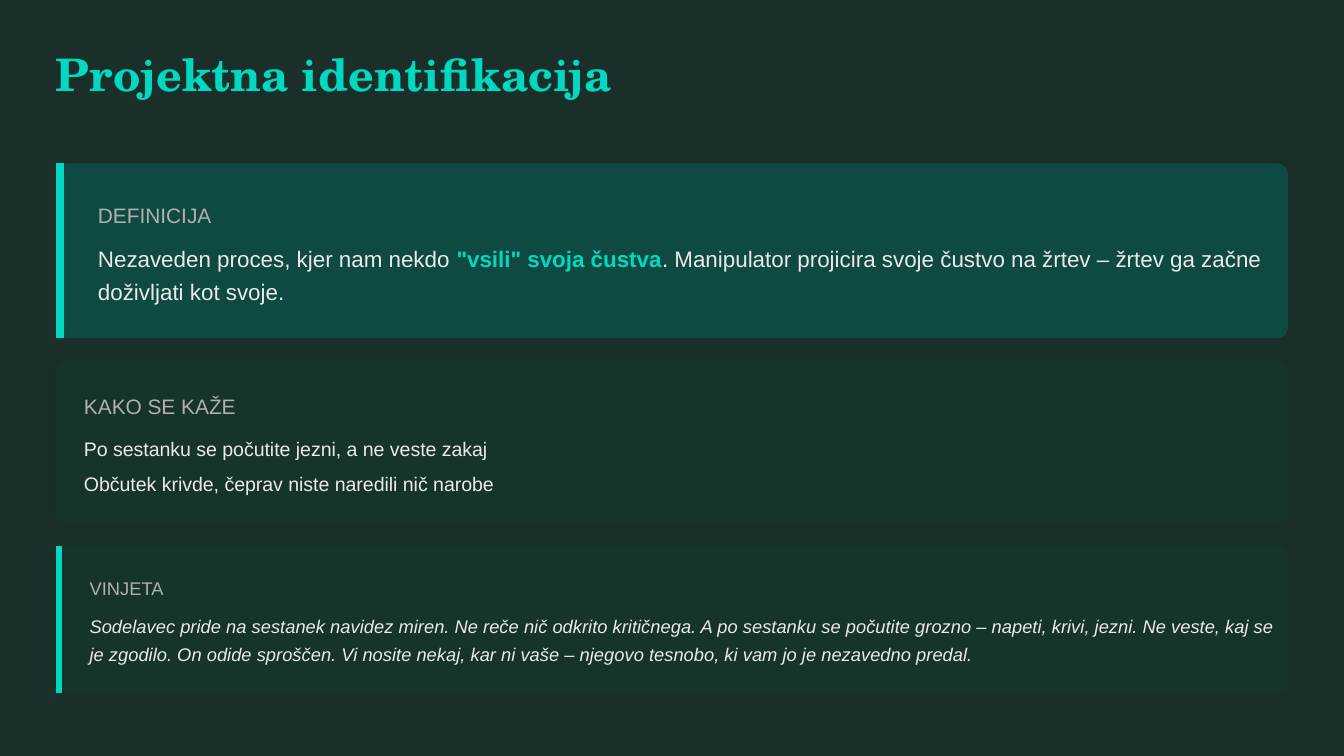
from lxml import etree
from pptx import Presentation
from pptx.dml.color import RGBColor
from pptx.enum.shapes import MSO_CONNECTOR, MSO_SHAPE
from pptx.oxml.ns import qn
from pptx.util import Pt

ROUNDED = MSO_SHAPE.ROUNDED_RECTANGLE
STRAIGHT = MSO_CONNECTOR.STRAIGHT

BACKGROUND = RGBColor(0x1A, 0x2E, 0x2A)
ACCENT = RGBColor(0x00, 0xD9, 0xC0)
CARD_STRONG = RGBColor(0x0F, 0x4A, 0x42)
CARD_SOFT = RGBColor(0x16, 0x33, 0x2E)
LABEL = RGBColor(0xB0, 0xB0, 0xB0)
BODY = RGBColor(0xEA, 0xEA, 0xEA)

LEFT, WIDTH, RADIUS = 30, 660, 6


class SlideBuilder:
    heading_font = "TeX Gyre Schola"
    body_font = "Arial"

    def __init__(self, prs):
        self.s = prs.slides.add_slide(prs.slide_layouts[6])
        fill = self.s.background.fill
        fill.solid()
        fill.fore_color.rgb = BACKGROUND

    def card(self, top, height, color, bar=0):
        """Rounded panel, with an accent bar of the given width on its left."""
        sp = self.s.shapes.add_shape(ROUNDED, Pt(LEFT), Pt(top), Pt(WIDTH), Pt(height))
        sp.adjustments[0] = RADIUS / height
        sp.shadow.inherit = False
        sp.fill.solid()
        sp.fill.fore_color.rgb = color
        sp.line.fill.background()
        if bar:
            self.line(LEFT + bar / 2, top, top + height, bar)

    def line(self, x, top, bottom, width):
        cn = self.s.shapes.add_connector(STRAIGHT, Pt(x), Pt(top), Pt(x), Pt(bottom))
        cn.line.color.rgb = ACCENT
        cn.line.width = Pt(width)
        etree.SubElement(cn._element.spPr, qn("a:effectLst"))

    def text(self, left, top, width, height, runs, size, leading,
             font=body_font, italic=False, after=0):
        """Text box; runs is a list of (text, color, bold)."""
        box = self.s.shapes.add_textbox(Pt(left), Pt(top), Pt(width), Pt(height))
        tf = box.text_frame
        tf.word_wrap = True
        tf.margin_left = tf.margin_right = tf.margin_top = tf.margin_bottom = 0
        p = tf.paragraphs[0]
        p.line_spacing = Pt(leading)
        p.space_after = Pt(after)
        for content, color, bold in runs:
            r = p.add_run()
            r.text = content
            r.font.name = font
            r.font.size = Pt(size)
            r.font.color.rgb = color
            r.font.bold = bold
            r.font.italic = italic


def main():
    prs = Presentation()
    prs.slide_width, prs.slide_height = Pt(720), Pt(405)
    b = SlideBuilder(prs)

    # Title
    b.text(LEFT, 30, 338, 24, [("Projektna identifikacija", ACCENT, True)],
           24, 24, font=b.heading_font, after=18)

    # Definition
    b.card(87.6, 93.75, CARD_STRONG, bar=4.5)
    b.text(52.5, 106, 632, 15.8, [("DEFINICIJA", LABEL, False)], 11.2, 15.8, after=6)
    b.text(52.5, 127.6, 632, 36, [
        ("Nezaveden proces, kjer nam nekdo ", BODY, False),
        ('"vsili" svoja čustva', ACCENT, True),
        (". Manipulator projicira svoje čustvo na žrtev – žrtev ga začne "
         "doživljati kot svoje.", BODY, False),
    ], 12, 18)

    # Signs
    b.card(193.5, 87, CARD_SOFT)
    b.text(45, 208.4, 643, 15.8, [("KAKO SE KAŽE", LABEL, False)], 11.2, 15.8, after=7.5)
    signs = ["Po sestanku se počutite jezni, a ne veste zakaj",
             "Občutek krivde, čeprav niste naredili nič narobe"]
    for i, sign in enumerate(signs):
        b.text(45, 231.7 + i * 19.2, 643, 14.7, [(sign, BODY, False)], 10.5, 14.7)

    # Vignette
    b.card(292.5, 79, CARD_SOFT, bar=3)
    b.text(48, 307.4, 639.4, 13.7, [("VINJETA", LABEL, False)], 9.8, 13.7, after=6)
    b.text(48, 327, 639.4, 29.2, [
        ("Sodelavec pride na sestanek navidez miren. Ne reče nič odkrito kritičnega. "
         "A po sestanku se počutite grozno – napeti, krivi, jezni. Ne veste, kaj se je "
         "zgodilo. On odide sproščen. Vi nosite nekaj, kar ni vaše – njegovo tesnobo, "
         "ki vam jo je nezavedno predal.", BODY, False),
    ], 9.8, 14.6, italic=True)

    prs.save("out.pptx")


if __name__ == "__main__":
    main()
